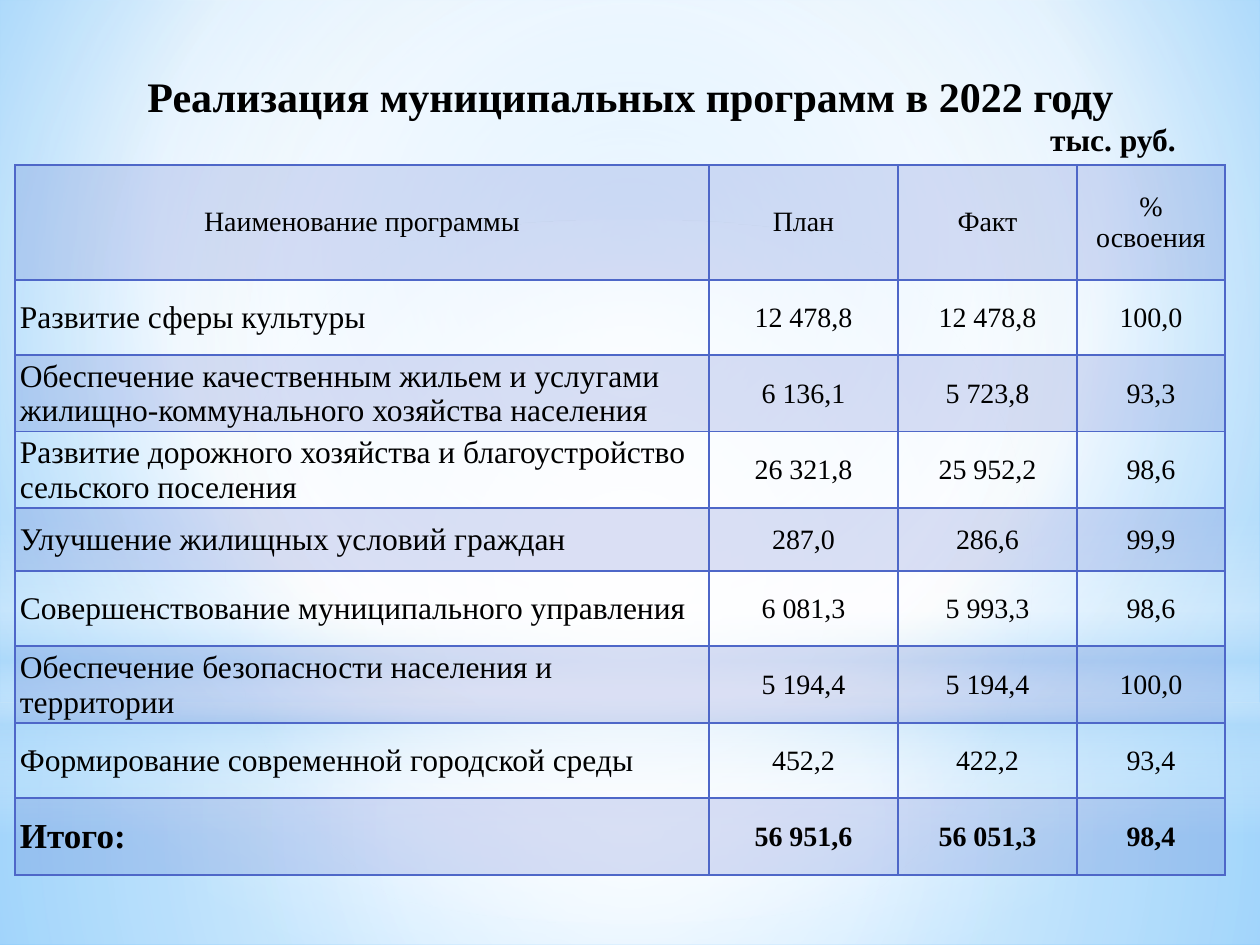
from lxml import etree
from pptx import Presentation
from pptx.dml.color import RGBColor
from pptx.enum import shapes, text
from pptx.oxml import parse_xml
from pptx.oxml.ns import nsdecls, qn
from pptx.util import Pt

BLACK = RGBColor(0x00, 0x00, 0x00)
INDIGO = RGBColor(0x4E, 0x67, 0xC8)
WHITE = RGBColor(0xFF, 0xFF, 0xFF)
SKY = RGBColor(0xB4, 0xDC, 0xFA)
PALE = RGBColor(0x9E, 0xD5, 0xFF)
AZURE = RGBColor(0x5B, 0xB9, 0xFF)
FONT = "Times New Roman"
LEFT, CENTER, RIGHT = text.PP_ALIGN.LEFT, text.PP_ALIGN.CENTER, text.PP_ALIGN.RIGHT
RECT, OVAL = shapes.MSO_SHAPE.RECTANGLE, shapes.MSO_SHAPE.OVAL

TITLE = [
    ("Реализация муниципальных программ в 2022 году", 24, CENTER),
    ("тыс. руб.", 18, RIGHT),
]
ROWS = [
    ("Наименование программы", "План", "Факт", "% освоения"),
    ("Развитие сферы культуры", "12 478,8", "12 478,8", "100,0"),
    ("Обеспечение качественным жильем и услугами жилищно-коммунального хозяйства населения",
     "6 136,1", "5 723,8", "93,3"),
    ("Развитие дорожного хозяйства и благоустройство сельского поселения",
     "26 321,8", "25 952,2", "98,6"),
    ("Улучшение жилищных условий граждан", "287,0", "286,6", "99,9"),
    ("Совершенствование муниципального управления", "6 081,3", "5 993,3", "98,6"),
    ("Обеспечение безопасности населения и территории", "5 194,4", "5 194,4", "100,0"),
    ("Формирование современной городской среды", "452,2", "422,2", "93,4"),
    ("Итого:", "56 951,6", "56 051,3", "98,4"),
]
COL_W = [694, 189, 179, 148]
ROW_H = [115, 75, 71, 71, 63, 75, 75, 75, 77]
BACKDROP = [(0, PALE, 100), (60, WHITE, 100), (100, AZURE, 100)]
MIDDLE = (50, 50, 50, 50)
GLOWS = [
    (RECT, (0, 703, 1260, 242), [(0, WHITE, 91), (37, WHITE, 76), (100, SKY, 79)], MIDDLE),
    (RECT, (0, 0, 1260, 703), [(0, WHITE, 89), (48, WHITE, 62), (100, SKY, 79)], MIDDLE),
    (RECT, (0, 519, 1260, 315), [(0, WHITE, 0), (29, WHITE, 30), (45, SKY, 40),
                                 (55, WHITE, 26), (65, SKY, 60), (100, WHITE, 0)], None),
    (OVAL, (0, 220, 1260, 703), [(0, WHITE, 100), (56, WHITE, 0)], MIDDLE),
]


def px(n):
    return round(n * 914400 / 126)


def set_gradient(fill, element, stops, focus):
    fill.gradient()
    grad = element.find(".//" + qn("a:gradFill"))
    stop_xml = "".join(
        f'<a:gs pos="{pos * 1000}"><a:srgbClr val="{color}">'
        f'<a:alpha val="{alpha * 1000}"/></a:srgbClr></a:gs>'
        for pos, color, alpha in stops)
    shade = '<a:lin ang="5400000" scaled="0"/>'
    if focus:
        sides = " ".join(f'{k}="{v * 1000}"' for k, v in zip("ltrb", focus))
        shade = f'<a:path path="circle"><a:fillToRect {sides}/></a:path>'
    grad.getparent().replace(grad, parse_xml(
        f'<a:gradFill {nsdecls("a")} rotWithShape="1"><a:gsLst>{stop_xml}</a:gsLst>{shade}</a:gradFill>'))


def write(p, words, size, bold, align):
    p.alignment = align
    r = p.add_run()
    r.text = words
    for key, value in {"name": FONT, "size": Pt(size), "bold": bold}.items():
        setattr(r.font, key, value)
    r.font.color.rgb = BLACK


def style_cell(cell, insets, shaded):
    cell.vertical_anchor = text.MSO_ANCHOR.MIDDLE
    for side, n in zip(("left", "top", "right", "bottom"), insets):
        setattr(cell, f"margin_{side}", px(n))
    pr = cell._tc.get_or_add_tcPr()
    for side in "LRTB":
        pr.append(parse_xml(
            f'<a:ln{side} {nsdecls("a")} w="12700"><a:solidFill>'
            f'<a:srgbClr val="{INDIGO}"/></a:solidFill></a:ln{side}>'))
    if shaded:
        cell.fill.solid()
        cell.fill.fore_color.rgb = INDIGO
        color = pr.find(qn("a:solidFill")).find(qn("a:srgbClr"))
        etree.SubElement(color, qn("a:alpha")).set("val", "20000")
    else:
        cell.fill.background()


def add_programs(slide):
    table = slide.shapes.add_table(
        len(ROWS), len(COL_W), px(15), px(165), px(sum(COL_W)), px(sum(ROW_H))).table
    table.first_row = table.horz_banding = False
    for col, w in zip(table.columns, COL_W):
        col.width = px(w)
    for i, (row, h) in enumerate(zip(ROWS, ROW_H)):
        table.rows[i].height = px(h)
        header, total = i == 0, i == len(ROWS) - 1
        for j, words in enumerate(row):
            cell = table.cell(i, j)
            name = j == 0 and not header
            insets = (13, 6, 13, 6) if header else (5 if name else 1, 1, 1, 0)
            style_cell(cell, insets, i % 2 == 0)
            size = (20 if total else 18) if name else 16
            write(cell.text_frame.paragraphs[0], words, size, total, LEFT if name else CENTER)


def main():
    prs = Presentation()
    prs.slide_width, prs.slide_height = px(1260), px(945)
    slide = prs.slides.add_slide(prs.slide_layouts[6])
    set_gradient(slide.background.fill, slide.element, BACKDROP, (20, 10, 20, 60))
    for kind, box, stops, focus in GLOWS:
        sp = slide.shapes.add_shape(kind, *map(px, box))
        sp.shadow.inherit = False
        sp.line.fill.background()
        set_gradient(sp.fill, sp.element, stops, focus)

    tf = slide.shapes.add_textbox(*map(px, (69, 70, 1123, 84))).text_frame
    frame = {"word_wrap": True, "margin_left": px(16), "margin_right": px(16),
             "margin_top": 0, "margin_bottom": 0}
    for key, value in frame.items():
        setattr(tf, key, value)
    for i, (words, size, align) in enumerate(TITLE):
        p = tf.add_paragraph() if i else tf.paragraphs[0]
        write(p, words, size, True, align)

    add_programs(slide)
    prs.save("out.pptx")


if __name__ == "__main__":
    main()
